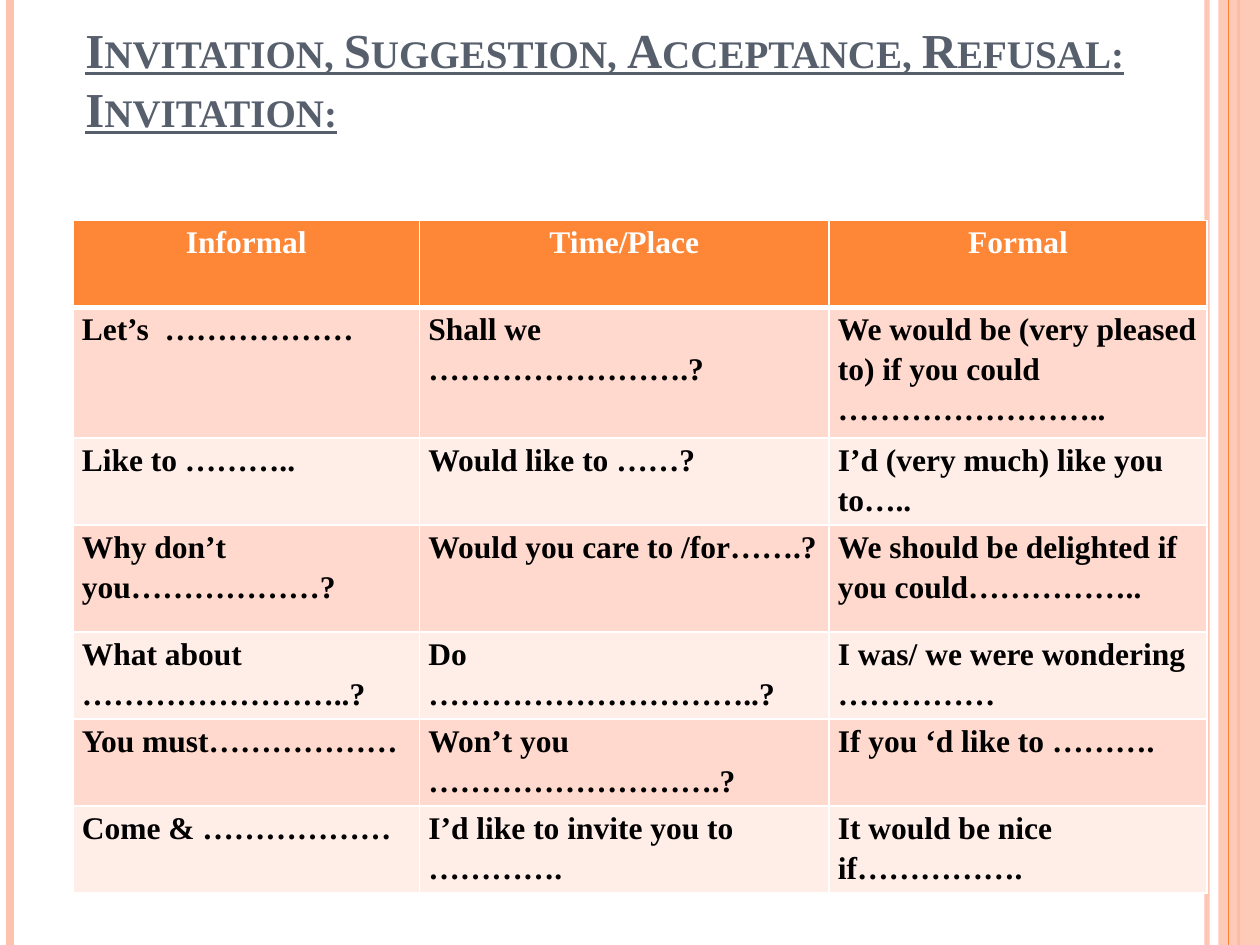
from lxml.etree import SubElement
from pptx import Presentation
from pptx.dml.color import RGBColor
from pptx.enum.shapes import MSO_CONNECTOR, MSO_SHAPE
from pptx.enum.text import PP_ALIGN, MSO_ANCHOR
from pptx.oxml.ns import qn
from pptx.util import Inches, Pt

WHITE = RGBColor(0xFF, 0xFF, 0xFF)
BLACK = RGBColor(0, 0, 0)
SLATE = RGBColor(0x57, 0x5F, 0x6D)
ORANGE = RGBColor(0xFE, 0x86, 0x37)
PEACH = RGBColor(0xFE, 0xC3, 0xAE)
BAND_DARK = RGBColor(0xFF, 0xD9, 0xCE)
BAND_LIGHT = RGBColor(0xFF, 0xED, 0xE8)
FONT = "Times New Roman"

LEFT, WIDTH = Inches(0.58), Inches(9)
COLUMNS = [2.75, 3.25, 3]
ROWS = [0.69, 0.95, 0.69, 0.85, 0.69, 0.69, 0.69]
PHRASES = [
    ["Informal", "Time/Place", "Formal"],
    ["Let’s  ………………", "Shall we …………………….?",
     "We would be (very pleased to) if you could …………………….."],
    ["Like to ………..", "Would like to ……?", "I’d (very much) like you to….."],
    ["Why don’t you………………?", "Would you care to /for…….?",
     "We should be delighted if you could…………….."],
    ["What about ……………………..?", "Do …………………………..?",
     "I was/ we were wondering ……………"],
    ["You must………………", "Won’t you ……………………….?", "If you ‘d like to ………."],
    ["Come & ………………", "I’d like to invite you to ………….",
     "It would be nice if……………."],
]


def set_alpha(properties, percent):
    color = next(properties.iter(qn("a:srgbClr")))
    SubElement(color, qn("a:alpha"), val=str(percent * 1000))


def style_font(font, size, color):
    font.name, font.size, font.bold = FONT, Pt(size), True
    font.color.rgb = color


deck = Presentation()
deck.slide_width, deck.slide_height = Inches(10), Inches(7.5)
page = deck.slides.add_slide(deck.slide_layouts[6])
page.background.fill.solid()
page.background.fill.fore_color.rgb = WHITE

for x, color, weight, alpha in [
    (9.58, PEACH, 3, 93),
    (0.08, PEACH, 4.5, 100),
    (9.83, ORANGE, 1.5, 100),
    (9.75, ORANGE, 0.75, 100),
]:
    if x == 9.75:
        strip = page.shapes.add_shape(
            MSO_SHAPE.RECTANGLE, Inches(9.67), 0, Inches(0.33), deck.slide_height)
        strip.shadow.inherit = False
        strip.fill.solid()
        strip.fill.fore_color.rgb = PEACH
        strip.line.fill.background()
        set_alpha(strip.fill._xPr, 87)
    rule = page.shapes.add_connector(
        MSO_CONNECTOR.STRAIGHT, Inches(x), 0, Inches(x), deck.slide_height)
    rule.line.color.rgb = color
    rule.line.width = Pt(weight)
    SubElement(rule._element.spPr, qn("a:effectLst"))
    if alpha < 100:
        set_alpha(rule._element.spPr, alpha)

title = page.shapes.add_textbox(LEFT, Inches(0.15), WIDTH, Inches(1.4))
frame = title.text_frame
frame.word_wrap = True
frame.vertical_anchor = MSO_ANCHOR.TOP
frame.margin_top = frame.margin_bottom = 0
para = frame.paragraphs[0]
para.text = "Invitation, Suggestion, Acceptance, Refusal:\vInvitation:"
para.line_spacing = Pt(33.7)
for span in para.runs:
    style_font(span.font, 27.9, SLATE)
    span.font.underline = True
    span.font._element.set("cap", "small")

table = page.shapes.add_table(
    len(ROWS), len(COLUMNS), LEFT, Inches(1.75), WIDTH, Inches(sum(ROWS))).table
for column, width in zip(table.columns, COLUMNS):
    column.width = Inches(width)
for row, height in zip(table.rows, ROWS):
    row.height = Inches(height)

for r, phrases in enumerate(PHRASES):
    header = r == 0
    for c, phrase in enumerate(phrases):
        cell = table.cell(r, c)
        cell.margin_left = cell.margin_right = Inches(0.07)
        cell.margin_top = cell.margin_bottom = 0
        properties = cell._tc.get_or_add_tcPr()
        for side in "LRTB":
            thick = (header and side == "B") or (r == 1 and side == "T")
            border = SubElement(
                properties, qn(f"a:ln{side}"), w=str(Pt(3 if thick else 1)))
            fill = SubElement(border, qn("a:solidFill"))
            SubElement(fill, qn("a:srgbClr"), val=str(WHITE))
        cell.fill.solid()
        cell.fill.fore_color.rgb = (
            ORANGE if header else BAND_DARK if r % 2 else BAND_LIGHT)
        para = cell.text_frame.paragraphs[0]
        para.text = phrase
        para.alignment = PP_ALIGN.CENTER if header else PP_ALIGN.LEFT
        para.line_spacing = 1.15
        style_font(para.runs[0].font, 18, WHITE if header else BLACK)

deck.save("out.pptx")
